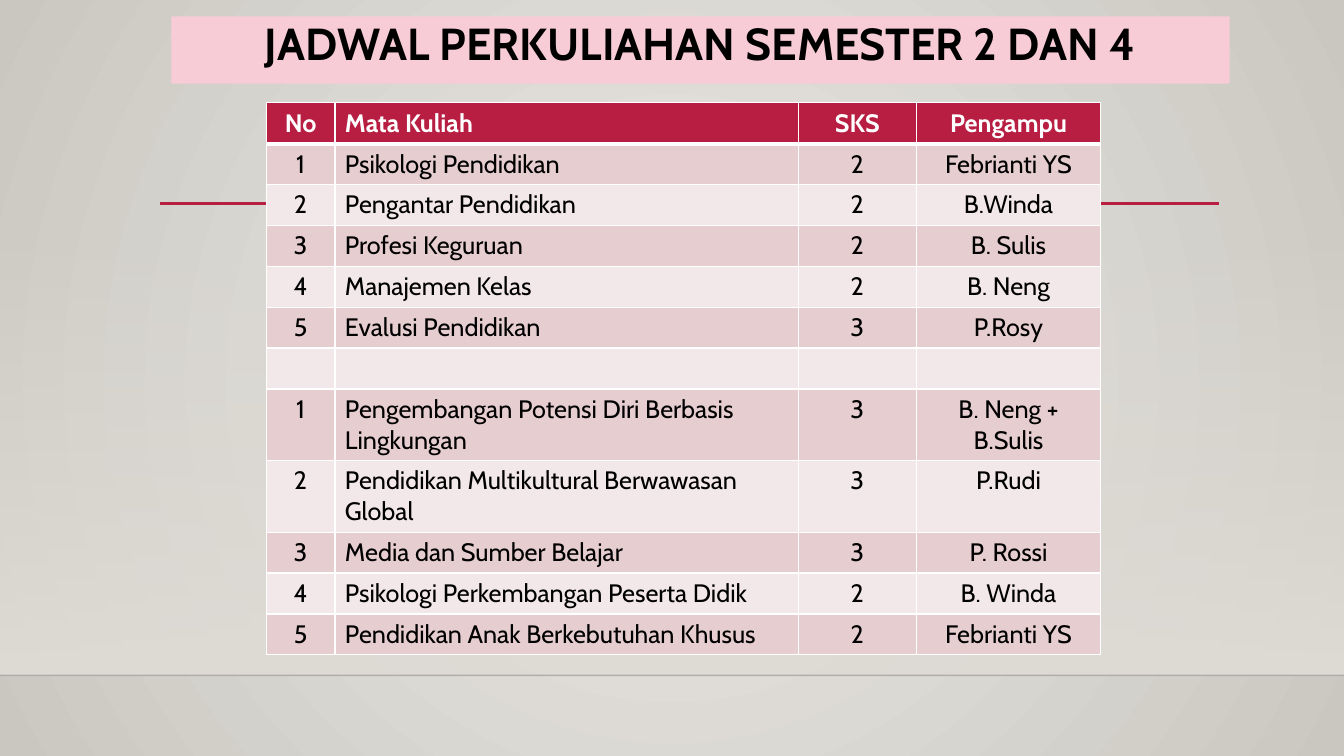
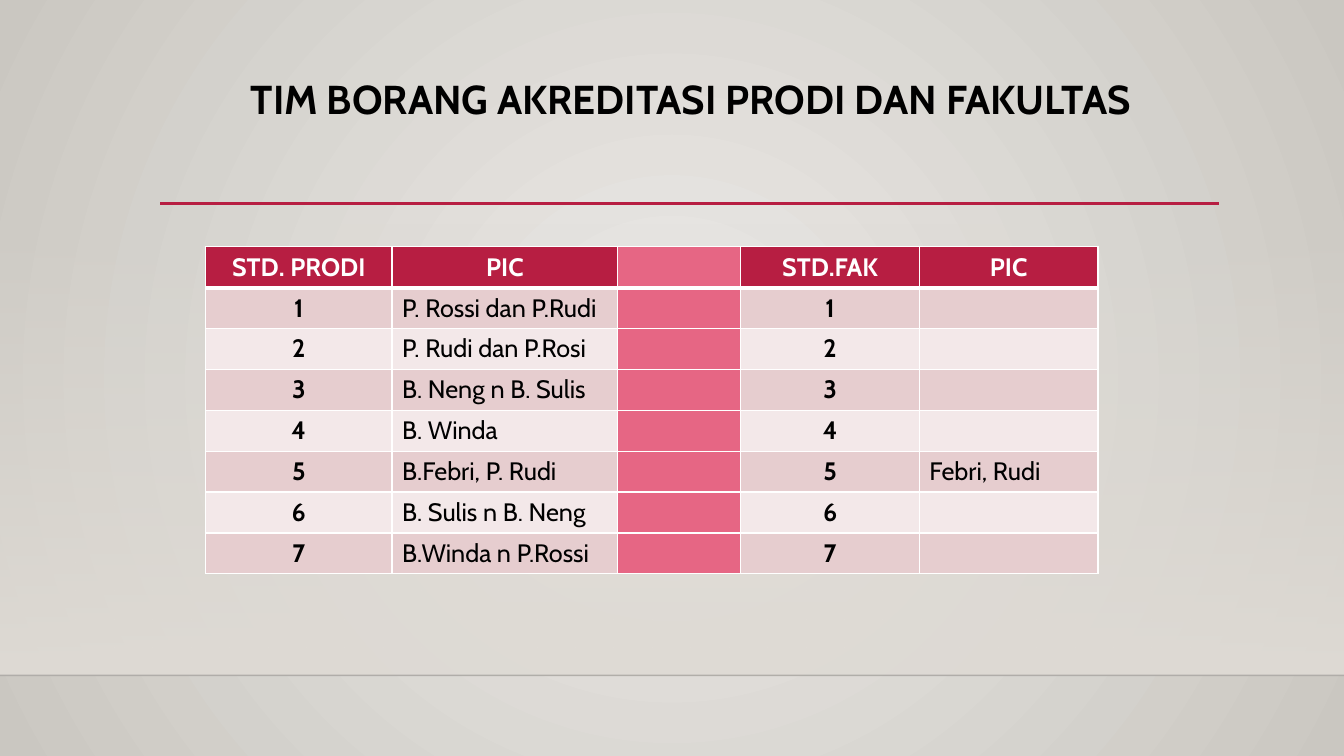
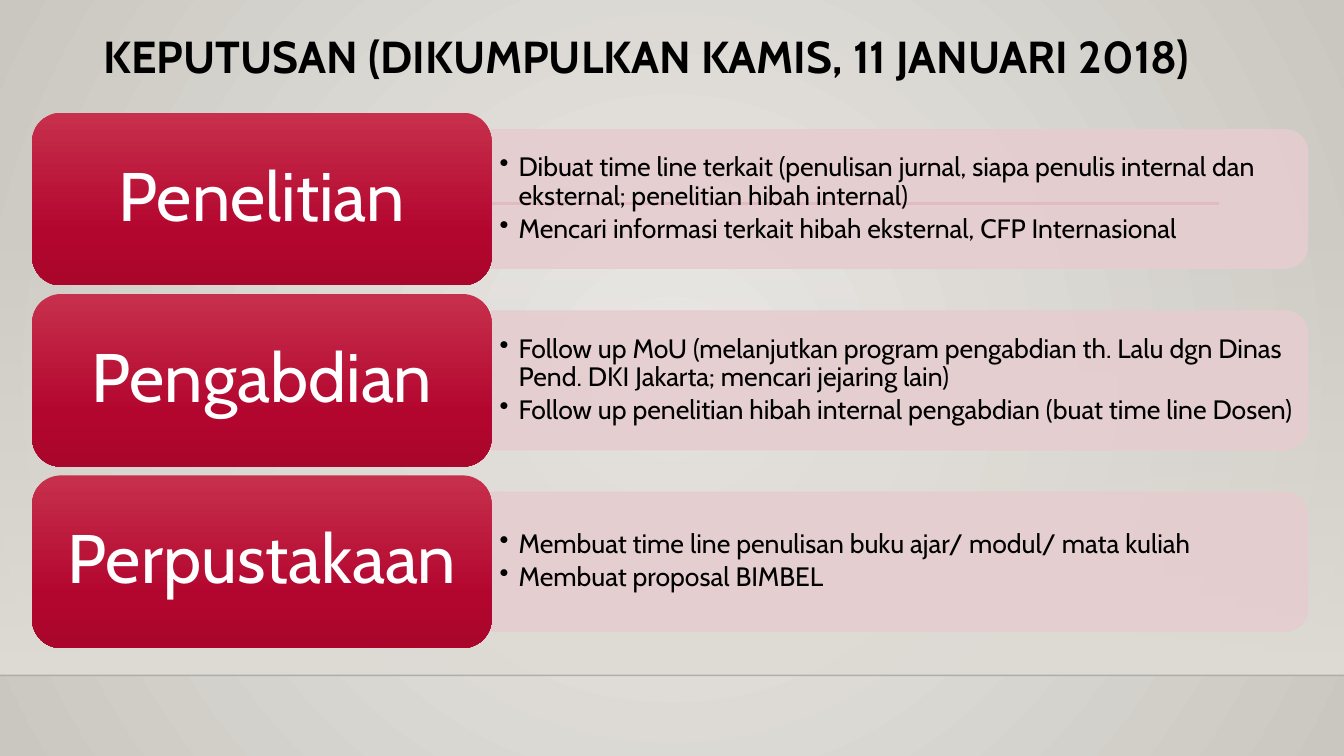
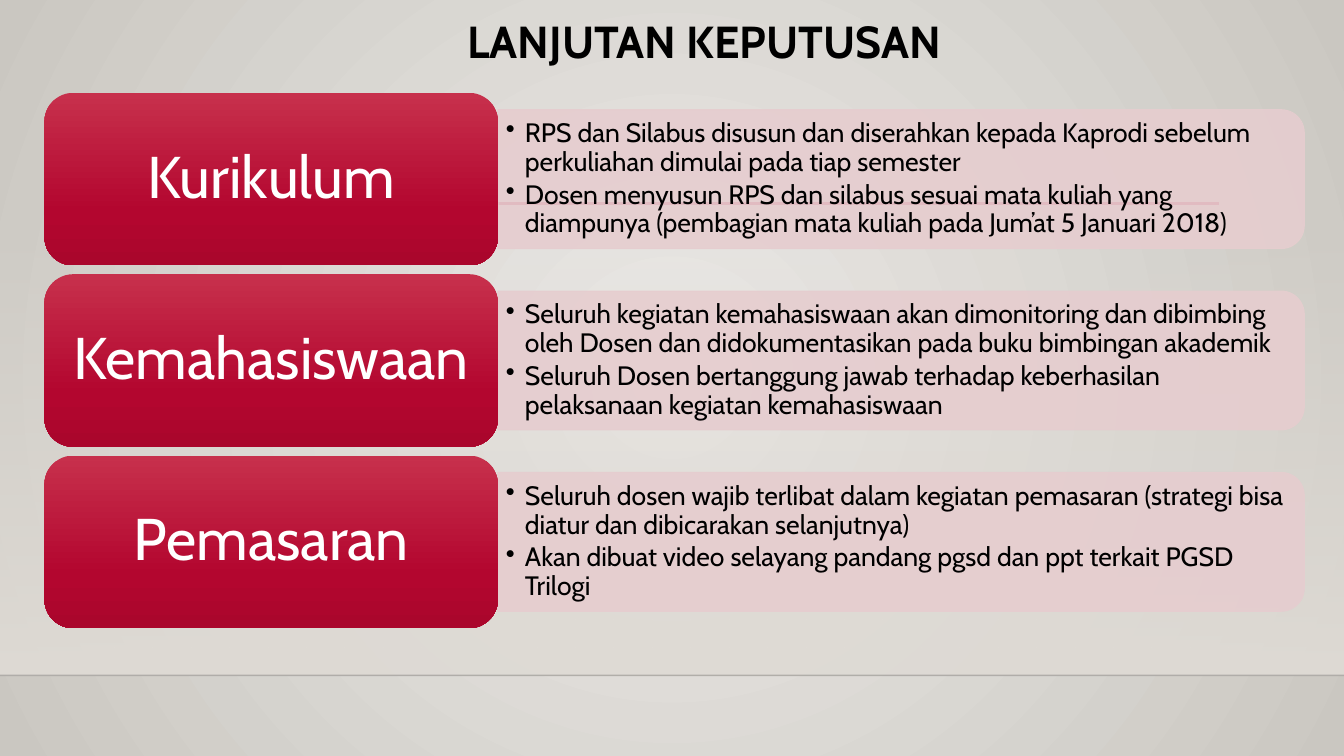
from lxml.etree import SubElement
from pptx import Presentation
from pptx.dml.color import RGBColor
from pptx.enum.shapes import MSO_CONNECTOR, MSO_SHAPE
from pptx.enum.text import MSO_ANCHOR, MSO_AUTO_SIZE, PP_ALIGN
from pptx.oxml.ns import qn
from pptx.util import Cm, Pt

# Shared look
FONT = "Cabin"
CRIMSON, ROSE, TITLE_PINK = "B71E42", "E66684", "F7CCD6"
BAND_DARK, BAND_LIGHT = "E6CDCF", "F3E8E9"
BLACK, WHITE, STONE = "000000", "FFFFFF", "DFDBD5"
SLIDE_W, SLIDE_H, FLOOR_Y = 33.87, 19.05, 17.02
ROW_H = 1.03
BOX_H, PANEL_H, BOX_GAP = 4.35, 3.5, 0.22

# Content: areas are left, top, width, height in cm
COURSES = {
    "title": "JADWAL PERKULIAHAN SEMESTER 2 DAN 4",
    "title_area": (4.32, 0.41, 26.67, 1.7),
    "title_fill": TITLE_PINK,
    "corner": (6.71, 2.59),
    "columns": (1.73, 11.68, 2.97, 4.65),
    "left_columns": {1},
    "left_header": True,
    "rows": [
        ("No", "Mata Kuliah", "SKS", "Pengampu"),
        ("1", "Psikologi Pendidikan", "2", "Febrianti YS"),
        ("2", "Pengantar Pendidikan", "2", "B.Winda"),
        ("3", "Profesi Keguruan", "2", "B. Sulis"),
        ("4", "Manajemen Kelas", "2", "B. Neng"),
        ("5", "Evalusi Pendidikan", "3", "P.Rosy"),
        ("", "", "", ""),
        ("1", "Pengembangan Potensi Diri Berbasis Lingkungan", "3", "B. Neng + B.Sulis"),
        ("2", "Pendidikan Multikultural Berwawasan Global", "3", "P.Rudi"),
        ("3", "Media dan Sumber Belajar", "3", "P. Rossi"),
        ("4", "Psikologi Perkembangan Peserta Didik", "2", "B. Winda"),
        ("5", "Pendidikan Anak Berkebutuhan Khusus", "2", "Febrianti YS"),
    ],
}
PRODI_TEAMS = ["P. Rossi dan P.Rudi", "P. Rudi dan P.Rosi", "B. Neng n B. Sulis",
               "B. Winda", "B.Febri, P. Rudi", "B. Sulis n B. Neng", "B.Winda n P.Rossi"]
FACULTY_TEAMS = {5: "Febri, Rudi"}
ACCREDITATION = {
    "title": "TIM BORANG AKREDITASI PRODI DAN FAKULTAS",
    "title_area": (3.81, 1.88, 27.2, 1.85),
    "title_size": 28.8,
    "corner": (5.18, 6.22),
    "columns": (4.7, 5.69, 3.1, 4.5, 4.5),
    "left_columns": {1, 4},
    "bold_columns": {0, 3},
    "divider": 2,
    "rows": [("STD. PRODI", "PIC", "", "STD.FAK", "PIC")] + [
        (str(number), team, "", str(number), FACULTY_TEAMS.get(number, ""))
        for number, team in enumerate(PRODI_TEAMS, 1)],
}
DECISIONS = {
    "title": "KEPUTUSAN (DIKUMPULKAN KAMIS, 11 JANUARI 2018)",
    "title_area": (0, 0.74, 32.61, 2.1),
    "corner": (0.81, 2.84),
    "widths": (11.58, 20.57),
    "topic_size": 49,
    "topics": [
        ("Penelitian", [
            "Dibuat time line terkait (penulisan jurnal, siapa penulis internal dan eksternal; penelitian hibah internal)",
            "Mencari informasi terkait hibah eksternal, CFP Internasional"]),
        ("Pengabdian", [
            "Follow up MoU (melanjutkan program pengabdian th. Lalu dgn Dinas Pend. DKI Jakarta; mencari jejaring lain)",
            "Follow up penelitian hibah internal pengabdian (buat time line Dosen)"]),
        ("Perpustakaan", [
            "Membuat time line penulisan buku ajar/ modul/ mata kuliah",
            "Membuat proposal BIMBEL"]),
    ],
}
MORE_DECISIONS = {
    "title": "LANJUTAN KEPUTUSAN",
    "title_area": (4.42, 0.38, 26.67, 1.96),
    "corner": (1.12, 2.34),
    "widths": (11.43, 20.32),
    "topic_size": 42,
    "topics": [
        ("Kurikulum", [
            "RPS dan Silabus disusun dan diserahkan kepada Kaprodi sebelum perkuliahan dimulai pada tiap semester",
            "Dosen menyusun RPS dan silabus sesuai mata kuliah yang diampunya (pembagian mata kuliah pada Jum’at 5 Januari 2018)"]),
        ("Kemahasiswaan", [
            "Seluruh kegiatan kemahasiswaan akan dimonitoring dan dibimbing oleh Dosen dan didokumentasikan pada buku bimbingan akademik",
            "Seluruh Dosen bertanggung jawab terhadap keberhasilan pelaksanaan kegiatan kemahasiswaan"]),
        ("Pemasaran", [
            "Seluruh dosen wajib terlibat dalam kegiatan pemasaran (strategi bisa diatur dan dibicarakan selanjutnya)",
            "Akan dibuat video selayang pandang pgsd dan ppt terkait PGSD Trilogi"]),
    ],
}


def color(code):
    return RGBColor.from_string(code)


def write(frame, lines, size=18, ink=BLACK, bold=False, align=PP_ALIGN.LEFT,
          spacing=None, after=None, bullets=False):
    """Fill a text frame, one paragraph per line."""
    for number, line in enumerate(lines):
        paragraph = frame.paragraphs[0] if number == 0 else frame.add_paragraph()
        paragraph.alignment = align
        paragraph.line_spacing = spacing
        if after:
            paragraph.space_after = Pt(after)
        if bullets:
            properties = paragraph._p.get_or_add_pPr()
            properties.set("marL", str(Cm(0.48)))
            properties.set("indent", str(-Cm(0.48)))
            SubElement(properties, qn("a:buChar"), char="•")
        run = paragraph.add_run()
        run.text = line
        run.font.name, run.font.size, run.font.bold = FONT, Pt(size), bold
        run.font.color.rgb = color(ink)


def set_frame(frame, anchor, inset_x, inset_y):
    frame.word_wrap = True
    frame.auto_size = MSO_AUTO_SIZE.NONE
    frame.vertical_anchor = anchor
    frame.margin_left = frame.margin_right = Cm(inset_x)
    frame.margin_top = frame.margin_bottom = Cm(inset_y)


def set_gradient(fill, owner, stops, radial=False):
    """Stops are (position %, colour, opacity %), from top or from the centre."""
    fill.gradient()
    gradient = owner.xpath(".//a:gradFill")[0]
    for child in list(gradient):
        gradient.remove(child)
    stop_list = SubElement(gradient, qn("a:gsLst"))
    for position, code, opacity in stops:
        stop = SubElement(stop_list, qn("a:gs"), pos=str(position * 1000))
        tint = SubElement(stop, qn("a:srgbClr"), val=code)
        if opacity < 100:
            SubElement(tint, qn("a:alpha"), val=str(opacity * 1000))
    if radial:
        shade = SubElement(gradient, qn("a:path"), path="circle")
        SubElement(shade, qn("a:fillToRect"), l="50000", t="50000", r="50000", b="50000")
    else:
        SubElement(gradient, qn("a:lin"), ang="5400000", scaled="0")


def set_opacity(shape, percent):
    for tint in shape.element.xpath("./p:spPr//a:srgbClr"):
        SubElement(tint, qn("a:alpha"), val=str(percent * 1000))


def add_block(slide, kind, left, top, width, height):
    block = slide.shapes.add_shape(kind, Cm(left), Cm(top), Cm(width), Cm(height))
    block.shadow.inherit = False
    block.line.fill.background()
    return block


def add_rule(slide, x1, x2, y, code, weight):
    rule = slide.shapes.add_connector(MSO_CONNECTOR.STRAIGHT, Cm(x1), Cm(y), Cm(x2), Cm(y))
    rule.line.color.rgb = color(code)
    rule.line.width = Pt(weight)
    SubElement(rule.element.spPr, qn("a:effectLst"))
    return rule


def decorate_master(master, slide):
    """Draw the backdrop on a slide, then move it behind the master's placeholders."""
    set_gradient(master.background.fill, master.element,
                 [(0, "ECEAE7", 100), (100, "CAC7C1", 100)], radial=True)
    wall = add_block(slide, MSO_SHAPE.RECTANGLE, 0, 5.61, SLIDE_W, FLOOR_Y - 5.61)
    set_gradient(wall.fill, wall.element, [(0, STONE, 0), (100, STONE, 100)])
    floor_edge = add_rule(slide, 0, SLIDE_W, FLOOR_Y, "000001", 1)
    set_opacity(floor_edge, 20)
    title_rule = add_rule(slide, 4.04, 30.73, 5.13, CRIMSON, 2.5)
    for order, part in enumerate((wall, floor_edge, title_rule)):
        part.element.xpath(".//p:cNvPr")[0].set("id", str(101 + order))
        master.shapes.element.insert(2 + order, part.element)


def set_title(slide, content):
    title = slide.shapes.title
    title.left, title.top, title.width, title.height = map(Cm, content["title_area"])
    if "title_fill" in content:
        title.fill.solid()
        title.fill.fore_color.rgb = color(content["title_fill"])
    set_frame(title.text_frame, MSO_ANCHOR.TOP, 0.25, 0.13)
    write(title.text_frame, [content["title"]], size=content.get("title_size", 32),
          bold=True, align=PP_ALIGN.CENTER, spacing=0.9)


def set_borders(cell, row):
    properties = cell._tc.get_or_add_tcPr()
    weights = {"L": 1, "R": 1, "T": 3 if row == 1 else 1, "B": 3 if row == 0 else 1}
    for side, weight in weights.items():
        edge = SubElement(properties, qn("a:ln" + side), w=str(Pt(weight)))
        SubElement(SubElement(edge, qn("a:solidFill")), qn("a:srgbClr"), val=WHITE)


def add_schedule(slide, content):
    rows, columns = content["rows"], content["columns"]
    left, top = content["corner"]
    table = slide.shapes.add_table(len(rows), len(columns), Cm(left), Cm(top),
                                   Cm(sum(columns)), Cm(ROW_H * len(rows))).table
    table.first_row = table.horz_banding = False
    for column, width in zip(table.columns, columns):
        column.width = Cm(width)
    for r, row in enumerate(rows):
        table.rows[r].height = Cm(ROW_H)
        header = r == 0
        band = CRIMSON if header else BAND_DARK if r % 2 else BAND_LIGHT
        for c, entry in enumerate(row):
            cell = table.cell(r, c)
            set_borders(cell, r)
            cell.fill.solid()
            cell.fill.fore_color.rgb = color(ROSE if c == content.get("divider") else band)
            flush = c in content["left_columns"] and (not header or content.get("left_header"))
            write(cell.text_frame, [entry], ink=WHITE if header else BLACK,
                  bold=header or c in content.get("bold_columns", ()),
                  align=PP_ALIGN.LEFT if flush else PP_ALIGN.CENTER)


def add_topics(slide, content):
    left, first_top = content["corner"]
    box_w, panel_w = content["widths"]
    panel_left = left + box_w
    for number, (topic, points) in enumerate(content["topics"]):
        top = first_top + number * (BOX_H + BOX_GAP)
        middle = top + BOX_H / 2

        # Panel: an upright shape turned a quarter, so its round end faces right
        panel = add_block(slide, MSO_SHAPE.ROUND_2_SAME_RECTANGLE,
                          panel_left + (panel_w - PANEL_H) / 2, middle - panel_w / 2,
                          PANEL_H, panel_w)
        panel.rotation = 90
        panel.fill.solid()
        panel.fill.fore_color.rgb = color(BAND_DARK)
        panel.line.color.rgb = color(BAND_DARK)
        panel.line.width = Pt(0.75)
        set_opacity(panel, 90)

        details = slide.shapes.add_textbox(Cm(panel_left), Cm(middle - PANEL_H / 2),
                                           Cm(panel_w - 0.13), Cm(PANEL_H))
        set_frame(details.text_frame, MSO_ANCHOR.MIDDLE, 0.2, 0.1)
        write(details.text_frame, points, size=19, spacing=0.9, after=3, bullets=True)

        # Topic box
        box = add_block(slide, MSO_SHAPE.ROUNDED_RECTANGLE, left, top, box_w, BOX_H)
        set_gradient(box.fill, box.element,
                     [(0, "C7304C", 100), (69, "B3062F", 100), (100, "AA062C", 100)])
        set_frame(box.text_frame, MSO_ANCHOR.MIDDLE, 0.5, 0.25)
        write(box.text_frame, [topic], size=content["topic_size"], ink=WHITE,
              align=PP_ALIGN.CENTER, spacing=0.9)


def main():
    deck = Presentation()
    deck.slide_width, deck.slide_height = Cm(SLIDE_W), Cm(SLIDE_H)
    title_only = deck.slide_layouts[5]
    pages = [(COURSES, add_schedule), (ACCREDITATION, add_schedule),
             (DECISIONS, add_topics), (MORE_DECISIONS, add_topics)]
    for number, (content, add_body) in enumerate(pages):
        slide = deck.slides.add_slide(title_only)
        if number == 0:
            decorate_master(deck.slide_master, slide)
        set_title(slide, content)
        add_body(slide, content)
    deck.save("out.pptx")


if __name__ == "__main__":
    main()
